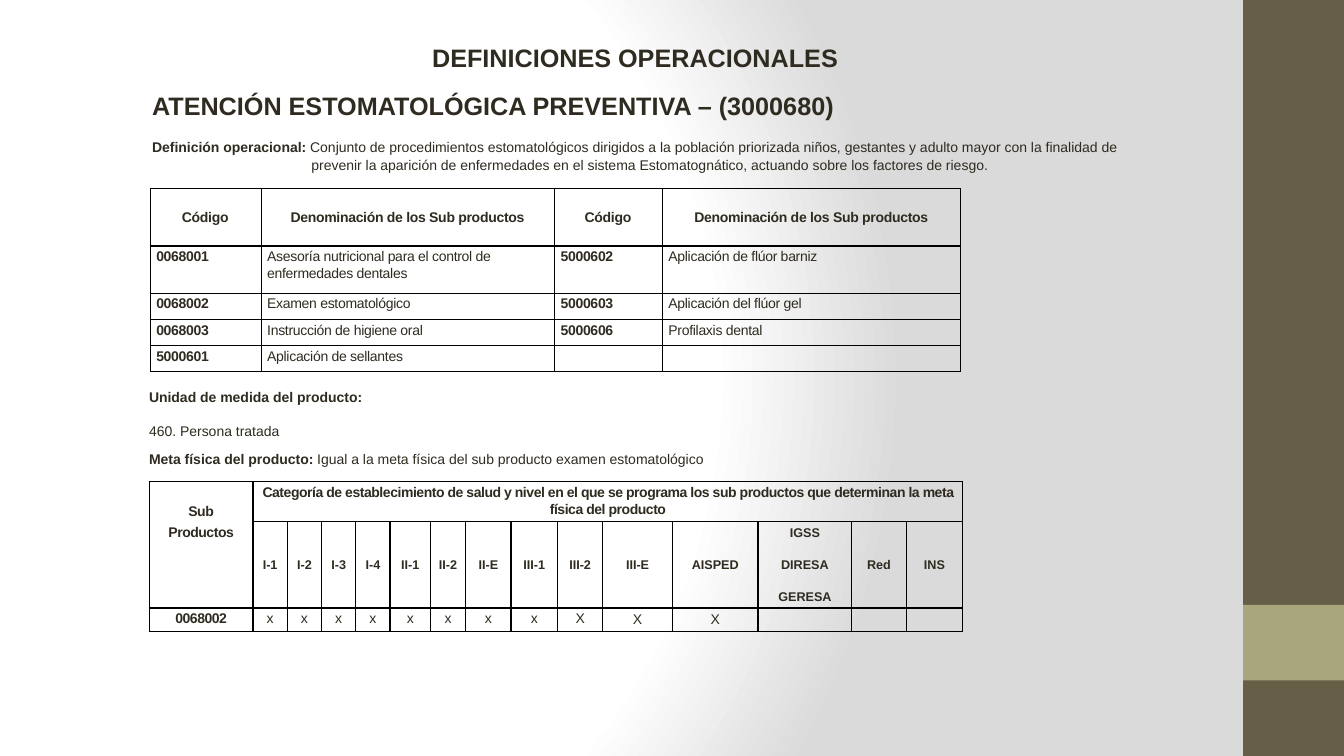
from lxml.etree import SubElement
from pptx import Presentation
from pptx.dml.color import RGBColor as RGB
from pptx.enum.shapes import MSO_SHAPE as Shape
from pptx.enum.text import MSO_ANCHOR as Anchor, MSO_AUTO_SIZE as Auto, PP_ALIGN as Align
from pptx.oxml import parse_xml
from pptx.oxml.ns import nsdecls, qn
from pptx.util import Inches, Pt

HUE = {"ink": "2F2B20", "line": "000000", "bar": "675E47", "band": "A9A57C",
       "light": "FFFFFF", "shade": "DADADA"}
U = Inches(0.1)  # grid step: the slide is 133.3 columns by 75 rows
WIDE, HIGH = 133.3, 75

deck = Presentation()
deck.slide_width, deck.slide_height = int(WIDE * U), int(HIGH * U)
slide = deck.slides.add_slide(deck.slide_layouts[5])


def write(par, parts, size=10, align=Align.LEFT, track=0, gap=6, lead=1.07):
    """Fill a paragraph with (text, bold) parts; track is in 1/100 pt."""
    par.alignment, par.line_spacing = align, lead
    par.space_before = par.space_after = Pt(gap)
    for text, bold in parts:
        run = par.add_run()
        run.text = text
        run.font.name, run.font.size, run.font.bold = "Arial", Pt(size), bold
        run.font.color.rgb = RGB.from_string(HUE["ink"])
        run._r.get_or_add_rPr().set("spc", str(track))


def add_grid(left, top, cols, rows, words, pads, style, bare=()):
    """Add a ruled table; style(r, c) gives size, bold, align, anchor, track.

    bare lists the (row, column, side) edges that carry no line.
    """
    grid = slide.shapes.add_table(len(rows), len(cols), int(left * U), int(top * U),
                                  int(sum(cols) * U), int(sum(rows) * U)).table
    grid.first_row = grid.horz_banding = False
    for col, wide in zip(grid.columns, cols):
        col.width = int(wide * U)
    for r, high in enumerate(rows):
        grid.rows[r].height = int(high * U)
        for c in range(len(cols)):
            cell = grid.cell(r, c)
            size, bold, align, anchor, track = style(r, c)
            cell.margin_left, cell.margin_top, cell.margin_right, cell.margin_bottom = (
                int(pad * U) for pad in pads)
            cell.vertical_anchor = anchor
            for side in "LRTB":
                edge = SubElement(cell._tc.get_or_add_tcPr(), qn("a:ln" + side), w=str(Pt(1)))
                if (r, c, side) in bare:
                    SubElement(edge, qn("a:noFill"))
                else:
                    paint = SubElement(edge, qn("a:solidFill"))
                    SubElement(paint, qn("a:srgbClr"), val=HUE["line"])
            cell.fill.background()
            text = words[r][c] if c < len(words[r]) else ""
            for i, line in enumerate(text.split("\n")):
                par = cell.text_frame.add_paragraph() if i else cell.text_frame.paragraphs[0]
                if line:
                    write(par, [(line, bold)], size, align, track)
                else:
                    SubElement(par._p, qn("a:endParaRPr"), sz=str(size * 100))
    return grid


# Background and side bars
stops = [(0, "light"), (75, "light"), (100, "shade")]
marks = "".join(f'<a:gs pos="{pos * 1000}"><a:srgbClr val="{HUE[name]}"/></a:gs>'
                for pos, name in stops)
slide._element.cSld.insert(0, parse_xml(
    f'<p:bg {nsdecls("p", "a")}><p:bgPr><a:gradFill rotWithShape="1"><a:gsLst>{marks}</a:gsLst>'
    '<a:path path="circle"><a:fillToRect l="20000" t="50000" r="100000" b="50000"/></a:path>'
    '</a:gradFill><a:effectLst/></p:bgPr></p:bg>'))

for top, high, name in [(0, HIGH, "bar"), (60, 7.5, "band")]:
    bar = slide.shapes.add_shape(Shape.RECTANGLE, int((WIDE - 10) * U), int(top * U),
                                 10 * U, int(high * U))
    bar.shadow.inherit = False
    bar.fill.solid()
    bar.fill.fore_color.rgb = RGB.from_string(HUE[name])
    bar.line.fill.background()

# Title and text blocks
title = slide.shapes.title
title.left, title.top, title.width, title.height = (int(n * U) for n in (14.1, 3.7, 97.8, 4))
title.text_frame.auto_size = Auto.NONE
title.text_frame.vertical_anchor = Anchor.TOP
write(title.text_frame.paragraphs[0], [("DEFINICIONES OPERACIONALES", True)], 18, Align.CENTER,
      gap=0, lead=1)

blocks = [
    ((14.1, 8.5, 98.5, 9.2), True, [
        ([("ATENCIÓN ESTOMATOLÓGICA PREVENTIVA – (3000680)", True)], 18, 6, 1),
        ([("Definición operacional:", True),
          (" Conjunto de procedimientos estomatológicos dirigidos a la población priorizada "
           "niños, gestantes y adulto mayor con la finalidad de prevenir la aparición de "
           "enfermedades en el sistema Estomatognático, actuando sobre los factores de riesgo.",
           False)], 10, 6, 1.07)]),
    ((13.8, 37.9, 66.7, 6.3), True, [
        ([("Unidad de medida del producto:", True)], 10, 6, 1.07),
        ([("460. Persona tratada", False)], 10, 6, 1.07)]),
    ((13.8, 44.2, 57.8, 2.7), False, [
        ([("Meta física del producto:", True),
          (" Igual a la meta física del sub producto examen estomatológico", False)], 10, 0, 1)]),
]
for place, wrap, pars in blocks:
    box = slide.shapes.add_textbox(*(int(n * U) for n in place))
    frame = box.text_frame
    frame.word_wrap = wrap
    for i, (parts, size, gap, lead) in enumerate(pars):
        par = frame.add_paragraph() if i else frame.paragraphs[0]
        write(par, parts, size, gap=gap, lead=lead)
        if parts[0][0].startswith("Definición"):
            hang = par._p.get_or_add_pPr()
            hang.set("marL", str(int(15.8 * U)))
            hang.set("indent", str(int(-15.8 * U)))

# Sub-product codes
codes = [
    ["Código", "Denominación de los Sub productos"] * 2,
    ["0068001", "Asesoría nutricional para el control de enfermedades dentales",
     "5000602", "Aplicación de flúor barniz"],
    ["0068002", "Examen estomatológico", "5000603", "Aplicación del flúor gel"],
    ["0068003", "Instrucción de higiene oral", "5000606", "Profilaxis dental"],
    ["5000601", "Aplicación de sellantes"],
]
add_grid(14.9, 18.7, [11, 29.1, 10.7, 29.6], [5.7, 4.7, 2.6, 2.6, 2.6], codes,
         (0.6, 0.2, 0.7, 0.2),
         lambda r, c: (10, r == 0 or c % 2 == 0, Align.LEFT if r else Align.CENTER,
                       Anchor.TOP if r else Anchor.MIDDLE, -20))

# Facility levels
levels = [
    ["Sub", "Categoría de establecimiento de salud y nivel en el que se programa los sub "
            "productos que determinan la meta física del producto"],
    ["Productos", "I-1", "I-2", "I-3", "I-4", "II-1", "II-2", "II-E", "III-1", "III-2", "III-E",
     "AISPED", "IGSS\nDIRESA\nGERESA", "Red", "INS"],
    ["0068002"] + ["x"] * 8 + ["X"] * 3,
]


def level_style(r, c):
    head = r == 1 and c > 0
    anchor = Anchor.TOP
    if head or (r == 2 and c > 9):
        anchor = Anchor.MIDDLE
    elif r == c == 0:
        anchor = Anchor.BOTTOM
    return 9 if head else 10, r < 2 or c == 0, Align.CENTER, anchor, 0 if head else -30


spans = [10.3] + [3.4] * 4 + [4, 3.5, 4.5, 4.6, 4.5, 6.9, 8.5, 9.3, 5.4, 5.6]
grid = add_grid(14.8, 47.8, spans, [3.9, 8.5, 2.3], levels, [0.2] * 4, level_style,
                {(0, 0, "B"), (1, 0, "T")})
grid.cell(0, 1).merge(grid.cell(0, len(spans) - 1))

deck.save("out.pptx")
